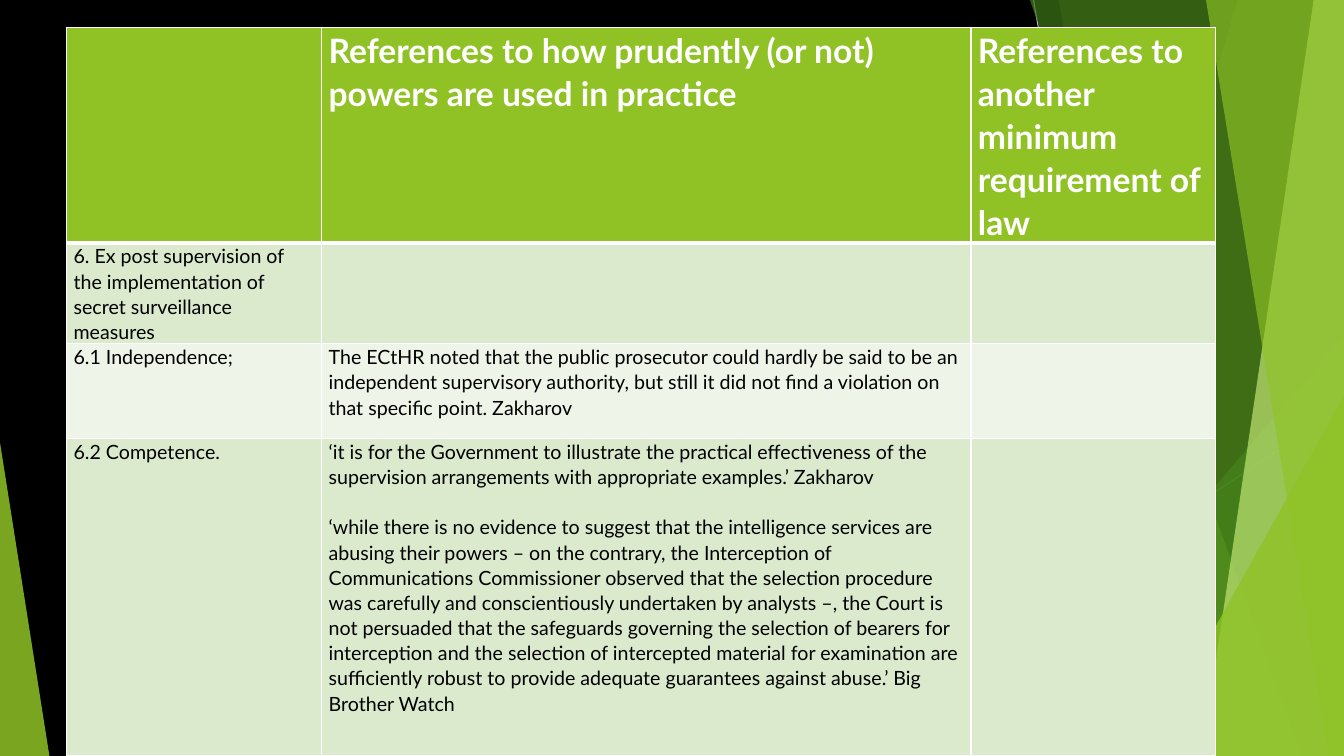
from lxml import etree
from pptx import Presentation
from pptx.dml.color import RGBColor
from pptx.enum.shapes import MSO_CONNECTOR, MSO_SHAPE
from pptx.oxml import parse_xml
from pptx.oxml.ns import nsdecls, qn
from pptx.util import Inches, Pt

COLORS = {
    "black": "000000", "white": "FFFFFF", "grey": "BFBFBF", "pale grey": "D9D9D9",
    "lime": "90C226", "green": "54A021", "dark green": "3F7819", "light lime": "C0E474",
    "band": "DBE9CD", "pale band": "EEF4E8",
}
SLIDE_W, SLIDE_H = 13.33, 7.5
FACET_TOP = -0.01

# from, to, colour
RAYS = [
    ((10.25, 0), (11.58, SLIDE_H), "grey"),
    ((SLIDE_W, 4.03), (8.12, SLIDE_H), "pale grey"),
]
# Facets reach the right edge: ("facet", left at top, left at bottom, colour, opacity)
# Triangles stand on the bottom edge: ("triangle", left, top, width, apex, colour, opacity)
FACETS = [
    ("facet", 12.28, 10.04, "lime", 30),
    ("facet", 10.5, 11.83, "lime", 20),
    ("triangle", 9.77, 3.33, 3.56, 1, "green", 72),
    ("facet", 10.21, 12.91, "dark green", 70),
    ("facet", 13.03, 11.92, "light lime", 70),
    ("facet", 11.96, 13.18, "lime", 65),
    ("triangle", 11.34, 3.93, 1.99, 1, "lime", 80),
    ("triangle", 0, 4.39, 0.49, 0, "lime", 85),
]

# Each cell is a list of paragraphs
ROWS = [
    [[],
     ["References to how prudently (or not) powers are used in practice"],
     ["References to another minimum requirement of law"]],
    [["6. Ex post supervision of the implementation of secret surveillance measures"], [], []],
    [["6.1 Independence;"],
     ["The ECtHR noted that the public prosecutor could hardly be said to be an independent "
      "supervisory authority, but still it did not find a violation on that specific point. "
      "Zakharov"],
     []],
    [["6.2 Competence."],
     ["‘it is for the Government to illustrate the practical effectiveness of the supervision "
      "arrangements with appropriate examples.’ Zakharov",
      "‘while there is no evidence to suggest that the intelligence services are abusing their "
      "powers – on the contrary, the Interception of Communications Commissioner observed that "
      "the selection procedure was carefully and conscientiously undertaken by analysts –, the "
      "Court is not persuaded that the safeguards governing the selection of bearers for "
      "interception and the selection of intercepted material for examination are sufficiently "
      "robust to provide adequate guarantees against abuse.’ Big Brother Watch"],
     []],
]
TABLE_LEFT, TABLE_TOP = 0.66, 0.27
COLUMN_WIDTHS = [2.53, 6.44, 2.43]
ROW_HEIGHTS = [2.14, 1.0, 0.94, 3.15]
ROW_FILLS = ["lime", "band", "pale band", "band"]
HEADER_FONT = {"name": "Lato", "size": Pt(24), "bold": True}
BODY_FONT = {"name": "Lato", "size": Pt(14), "bold": False}
CELL_MARGINS = {"margin_left": Inches(0.07), "margin_right": Inches(0.07),
                "margin_top": 0, "margin_bottom": 0}
PARAGRAPH_GAP = Pt(18)


def rgb(color):
    return RGBColor.from_string(COLORS[color])


def set_all(target, values):
    for name, value in values.items():
        setattr(target, name, value)


def paint(shape, color, opacity):
    shape.shadow.inherit = False
    shape.line.fill.background()
    shape.fill.solid()
    shape.fill.fore_color.rgb = rgb(color)
    tint = shape.fill._xPr.find(qn("a:solidFill"))[0]
    etree.SubElement(tint, qn("a:alpha")).set("val", str(opacity * 1000))


def add_ray(shapes, start, end, color):
    ray = shapes.add_connector(MSO_CONNECTOR.STRAIGHT, *map(Inches, start + end))
    ray.line.color.rgb = rgb(color)
    ray.line.width = Pt(0.75)
    etree.SubElement(ray._element.spPr, qn("a:effectLst"))


def add_facet(shapes, top_left, bottom_left, color, opacity):
    corners = [(SLIDE_W, FACET_TOP), (SLIDE_W, SLIDE_H), (bottom_left, SLIDE_H)]
    outline = shapes.build_freeform(Inches(top_left), Inches(FACET_TOP), scale=1.0)
    outline.add_line_segments([tuple(map(Inches, corner)) for corner in corners], close=True)
    paint(outline.convert_to_shape(), color, opacity)


def add_triangle(shapes, left, top, width, apex, color, opacity):
    box = map(Inches, (left, top, width, SLIDE_H - top))
    triangle = shapes.add_shape(MSO_SHAPE.ISOSCELES_TRIANGLE, *box)
    triangle.adjustments[0] = apex
    paint(triangle, color, opacity)


def set_borders(cell, widths):
    """Put white borders, given in points as left, right, top, bottom, before the fill."""
    for index, (side, width) in enumerate(zip("LRTB", widths)):
        cell._tc.get_or_add_tcPr().insert(index, parse_xml(
            f'<a:ln{side} {nsdecls("a")} w="{Pt(width)}"><a:solidFill>'
            f'<a:srgbClr val="{COLORS["white"]}"/></a:solidFill></a:ln{side}>'))


def fill_cell(cell, paragraphs, row):
    header = row == 0
    set_all(cell, CELL_MARGINS)
    cell.fill.solid()
    cell.fill.fore_color.rgb = rgb(ROW_FILLS[row])
    set_borders(cell, (1, 1, 3 if row == 1 else 1, 3 if header else 1))
    frame = cell.text_frame
    for index, text in enumerate(paragraphs):
        paragraph = frame.add_paragraph() if index else frame.paragraphs[0]
        paragraph.line_spacing = 1.07
        if index:
            paragraph.space_before = PARAGRAPH_GAP
        run = paragraph.add_run()
        run.text = text
        set_all(run.font, HEADER_FONT if header else BODY_FONT)
        run.font.color.rgb = rgb("white" if header else "black")


def add_findings_table(shapes):
    box = map(Inches, (TABLE_LEFT, TABLE_TOP, sum(COLUMN_WIDTHS), sum(ROW_HEIGHTS)))
    table = shapes.add_table(len(ROWS), len(COLUMN_WIDTHS), *box).table
    for column, width in zip(table.columns, COLUMN_WIDTHS):
        column.width = Inches(width)
    for row, (cells, height) in enumerate(zip(ROWS, ROW_HEIGHTS)):
        table.rows[row].height = Inches(height)
        for column, paragraphs in enumerate(cells):
            fill_cell(table.cell(row, column), paragraphs, row)


def main():
    prs = Presentation()
    prs.slide_width, prs.slide_height = Inches(SLIDE_W), Inches(SLIDE_H)
    slide = prs.slides.add_slide(prs.slide_layouts[6])
    slide.background.fill.solid()
    slide.background.fill.fore_color.rgb = rgb("black")
    for ray in RAYS:
        add_ray(slide.shapes, *ray)
    builders = {"facet": add_facet, "triangle": add_triangle}
    for kind, *values in FACETS:
        builders[kind](slide.shapes, *values)
    add_findings_table(slide.shapes)
    prs.save("out.pptx")


if __name__ == "__main__":
    main()
